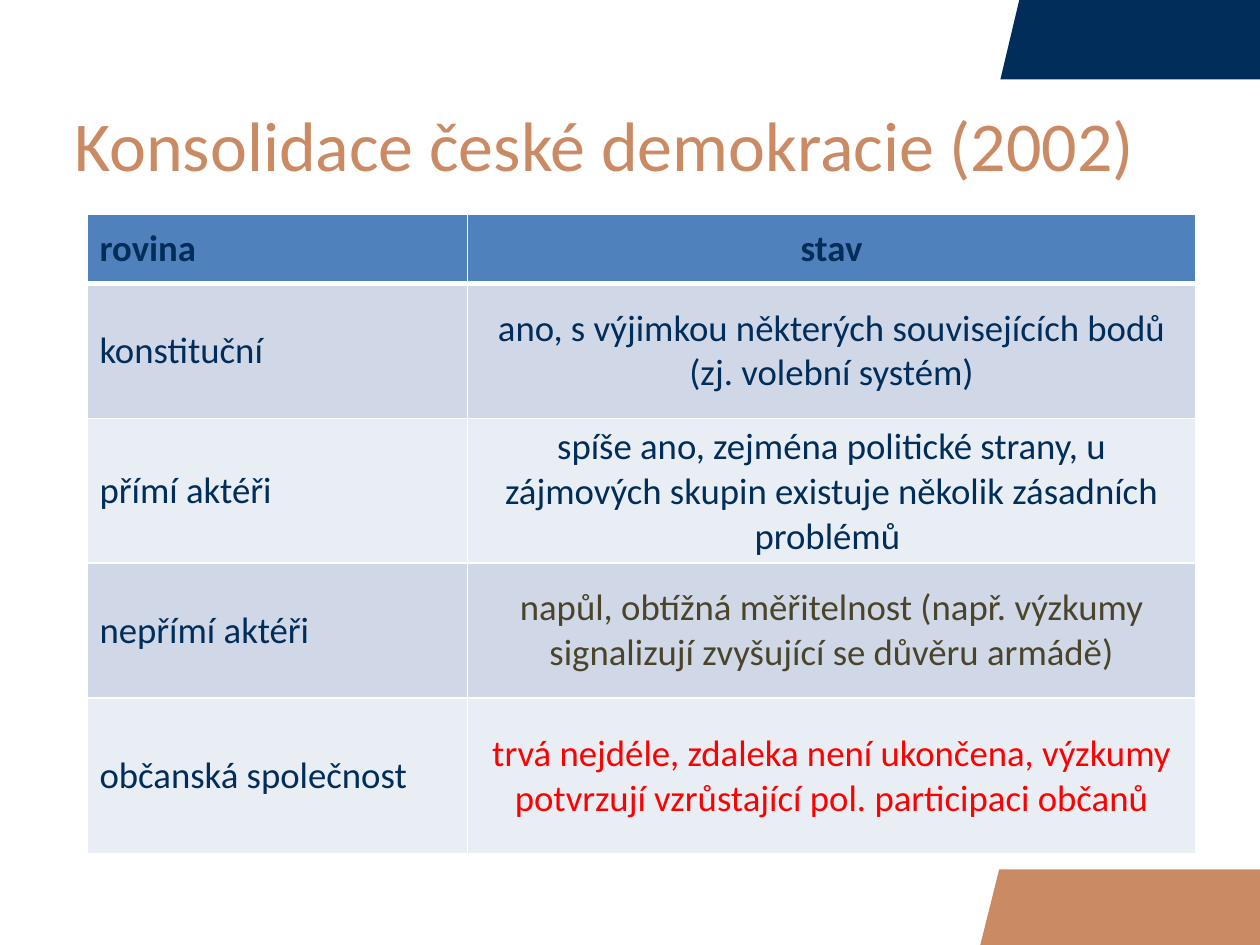
from pptx import Presentation
from pptx.dml.color import RGBColor
from pptx.enum.text import MSO_ANCHOR, PP_ALIGN
from pptx.oxml.ns import qn
from pptx.util import Inches, Pt
from lxml.etree import SubElement

NAVY = RGBColor(0x00, 0x2D, 0x5A)
COPPER = RGBColor(0xCA, 0x8A, 0x64)
HEADER_BLUE = RGBColor(0x4F, 0x81, 0xBD)
BAND_DARK = RGBColor(0xD0, 0xD8, 0xE8)
BAND_LIGHT = RGBColor(0xE9, 0xED, 0xF4)
OLIVE = RGBColor(0x4A, 0x45, 0x2A)
RED = RGBColor(0xFF, 0x00, 0x00)
WHITE = RGBColor(0xFF, 0xFF, 0xFF)

COLUMN_WIDTHS = [3.02, 5.78]
LEVELS = [
    (0.55, "rovina", "stav", NAVY),
    (1.07, "konstituční",
     "ano, s výjimkou některých souvisejících bodů (zj. volební systém)", NAVY),
    (1.07, "přímí aktéři",
     "spíše ano, zejména politické strany, u zájmových skupin existuje "
     "několik zásadních problémů ", NAVY),
    (1.07, "nepřímí aktéři",
     "napůl, obtížná měřitelnost (např. výzkumy signalizují zvyšující se "
     "důvěru armádě)", OLIVE),
    (1.24, "občanská společnost",
     "trvá nejdéle, zdaleka není ukončena, výzkumy potvrzují vzrůstající "
     "pol. participaci občanů", RED),
]


class SlideBuilder:
    font_name = "Calibri"
    title_size = Pt(40)
    table_size = Pt(21)

    def __init__(self, slide):
        self.slide = slide

    def apply(self, target, values):
        for attribute, value in values.items():
            setattr(target, attribute, value)

    def add_text(self, paragraph, text, size, color, bold=False):
        run = paragraph.add_run()
        run.text = text
        self.apply(run.font, {"name": self.font_name, "size": size, "bold": bold})
        run.font.color.rgb = color

    def corner(self, points, color):
        start, *rest = [(Inches(x), Inches(y)) for x, y in points]
        outline = self.slide.shapes.build_freeform(*start)
        outline.add_line_segments(rest, close=True)
        corner = outline.convert_to_shape()
        corner.shadow.inherit = False
        corner.fill.solid()
        corner.fill.fore_color.rgb = color
        corner.line.fill.background()

    def title(self, text, left, top, width, height):
        heading = self.slide.shapes.add_textbox(
            Inches(left), Inches(top), Inches(width), Inches(height))
        self.apply(heading.text_frame, {
            "word_wrap": True, "vertical_anchor": MSO_ANCHOR.MIDDLE,
            "margin_left": Inches(0.28), "margin_right": Inches(0.28)})
        self.add_text(heading.text_frame.paragraphs[0], text, self.title_size, COPPER)

    def borders(self, cell, widths):
        properties = cell._tc.get_or_add_tcPr()
        for side, width in widths.items():
            border = SubElement(properties, qn(f"a:ln{side}"), w=str(Pt(width)))
            fill = SubElement(border, qn("a:solidFill"))
            SubElement(fill, qn("a:srgbClr"), val=str(WHITE))

    def table(self, levels, left, top):
        height = sum(level[0] for level in levels)
        table = self.slide.shapes.add_table(
            len(levels), len(COLUMN_WIDTHS), Inches(left), Inches(top),
            Inches(sum(COLUMN_WIDTHS)), Inches(height)).table
        for column, width in zip(table.columns, COLUMN_WIDTHS):
            column.width = Inches(width)
        for index, (row_height, level, state, state_color) in enumerate(levels):
            table.rows[index].height = Inches(row_height)
            header = index == 0
            band = HEADER_BLUE if header else BAND_DARK if index % 2 else BAND_LIGHT
            edges = {"L": 1, "R": 1, "T": 3 if index == 1 else 1,
                     "B": 3 if header else 1}
            entries = [(level, NAVY, PP_ALIGN.LEFT),
                       (state, state_color, PP_ALIGN.CENTER)]
            for cell, (text, color, alignment) in zip(table.rows[index].cells, entries):
                self.borders(cell, edges)
                cell.fill.solid()
                cell.fill.fore_color.rgb = band
                cell.vertical_anchor = MSO_ANCHOR.MIDDLE
                paragraph = cell.text_frame.paragraphs[0]
                paragraph.alignment = alignment
                self.add_text(paragraph, text, self.table_size, color, bold=header)


def main():
    presentation = Presentation()
    presentation.slide_width = Inches(10)
    presentation.slide_height = Inches(7.5)
    builder = SlideBuilder(
        presentation.slides.add_slide(presentation.slide_layouts[6]))
    builder.corner([(7.94, 0.63), (8.09, 0), (10, 0), (10, 0.63)], NAVY)
    builder.corner([(7.78, 7.5), (7.93, 6.9), (10, 6.9), (10, 7.5)], COPPER)
    builder.title("Konsolidace české demokracie (2002)", 0.31, 0.92, 9.24, 0.44)
    builder.table(LEVELS, 0.69, 1.7)
    presentation.save("out.pptx")


if __name__ == "__main__":
    main()
